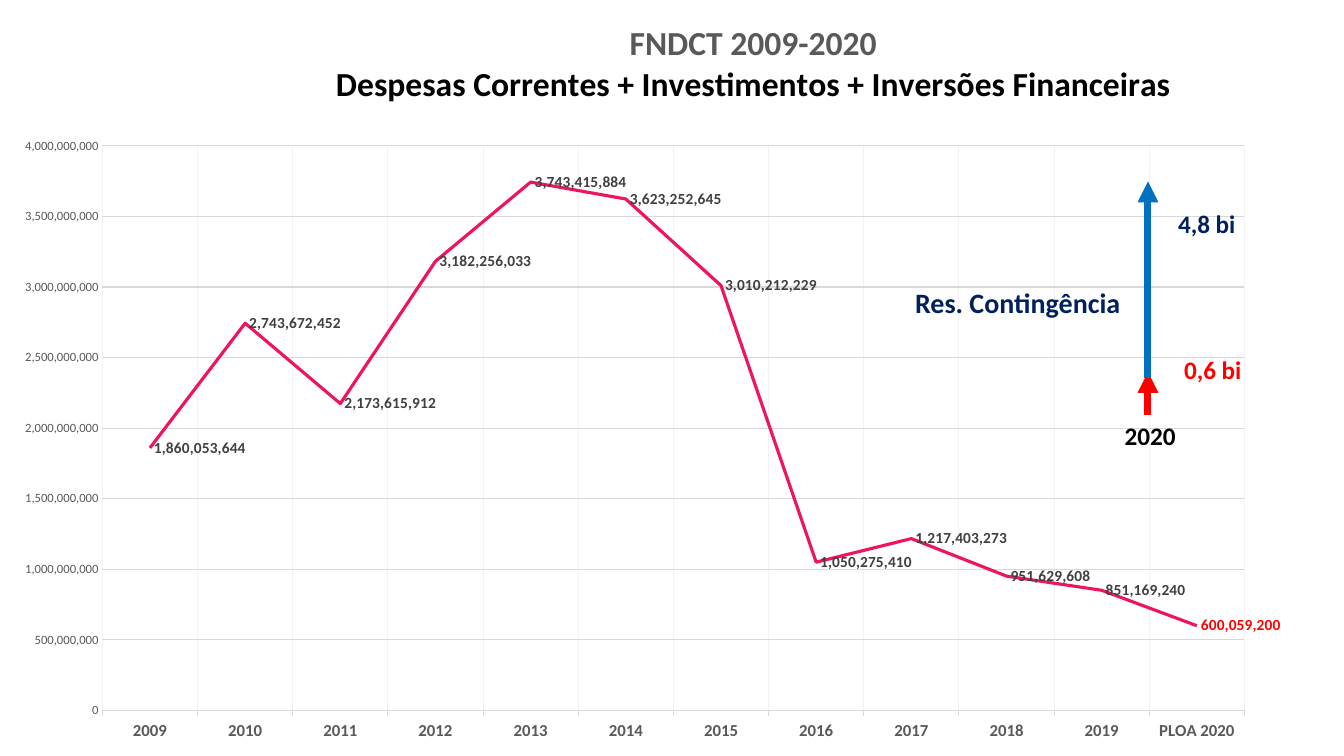
from lxml import etree
from pptx import Presentation
from pptx.chart.data import CategoryChartData
from pptx.dml.color import RGBColor
from pptx.enum.chart import XL_CHART_TYPE, XL_LABEL_POSITION, XL_MARKER_STYLE, XL_TICK_MARK
from pptx.enum.shapes import MSO_CONNECTOR
from pptx.enum.text import MSO_AUTO_SIZE, PP_ALIGN
from pptx.oxml.ns import qn
from pptx.util import Cm, Pt

LINE_CHART = XL_CHART_TYPE.LINE
LABEL_RIGHT = XL_LABEL_POSITION.RIGHT
NO_MARKER = XL_MARKER_STYLE.NONE
TICK_OUTSIDE, TICK_NONE = XL_TICK_MARK.OUTSIDE, XL_TICK_MARK.NONE
STRAIGHT = MSO_CONNECTOR.STRAIGHT
FIT_SHAPE = MSO_AUTO_SIZE.SHAPE_TO_FIT_TEXT
CENTER = PP_ALIGN.CENTER

FONT = "Calibri"
NUMBER_FORMAT = "#,##0"
BLACK, GRAY, DARK_GRAY = "000000", "595959", "404040"
GRID, LIGHT_GRID = "D9D9D9", "F2F2F2"
NAVY, BLUE, RED, PINK = "002060", "0070C0", "FF0000", "EE155A"

EXPENSES = {
    "2009": 1860053644, "2010": 2743672452, "2011": 2173615912,
    "2012": 3182256033, "2013": 3743415884, "2014": 3623252645,
    "2015": 3010212229, "2016": 1050275410, "2017": 1217403273,
    "2018": 951629608, "2019": 851169240, "PLOA 2020": 600059200,
}
TITLE_LINES = [
    ("FNDCT 2009-2020", GRAY),
    ("Despesas Correntes + Investimentos + Inversões Financeiras", BLACK),
]
ARROW_X = 28.93


def color(hex_code):
    return RGBColor.from_string(hex_code)


def format_font(font, size, hex_code, bold=True):
    font.name = FONT
    font.size = Pt(size)
    font.bold = bold
    font.color.rgb = color(hex_code)


def format_line(line, hex_code, width):
    line.color.rgb = color(hex_code)
    line.width = Pt(width)


def place_chart_part(element, index, **fractions):
    """Give a chart part a manual layout in fractions of the chart area."""
    for old_layout in element.findall(qn("c:layout")):
        element.remove(old_layout)
    layout = etree.Element(qn("c:layout"))
    manual = etree.SubElement(layout, qn("c:manualLayout"))
    if "w" in fractions:
        etree.SubElement(manual, qn("c:layoutTarget")).set("val", "inner")
    for name in ("xMode", "yMode"):
        etree.SubElement(manual, qn("c:" + name)).set("val", "edge")
    for name, value in fractions.items():
        etree.SubElement(manual, qn("c:" + name)).set("val", str(value))
    element.insert(index, layout)


def add_chart_title(chart):
    title = chart.chart_title
    text_frame = title.text_frame
    for number, (text, hex_code) in enumerate(TITLE_LINES):
        paragraph = text_frame.add_paragraph() if number else text_frame.paragraphs[0]
        paragraph.alignment = CENTER
        run = paragraph.add_run()
        run.text = text
        format_font(run.font, 24, hex_code)
    place_chart_part(title._element, 1, x=0.26, y=0.01)


def format_axes(chart):
    years = chart.category_axis
    years.major_tick_mark = TICK_OUTSIDE
    years.has_major_gridlines = True
    format_line(years.major_gridlines.format.line, LIGHT_GRID, 0.75)
    format_line(years.format.line, GRID, 0.75)
    format_font(years.tick_labels.font, 12, GRAY)

    amounts = chart.value_axis
    amounts.minimum_scale = 0
    amounts.maximum_scale = 4_000_000_000
    amounts.major_unit = 500_000_000
    amounts.major_tick_mark = TICK_NONE
    amounts.format.line.fill.background()
    format_line(amounts.major_gridlines.format.line, GRID, 0.75)
    format_font(amounts.tick_labels.font, 9, GRAY, bold=False)
    amounts.tick_labels.number_format = NUMBER_FORMAT
    amounts.tick_labels.number_format_is_linked = False


def format_series(series):
    series.smooth = False
    series.marker.style = NO_MARKER
    format_line(series.format.line, PINK, 2.25)
    labels = series.data_labels
    labels.show_value = True
    labels.position = LABEL_RIGHT
    labels.number_format = NUMBER_FORMAT
    labels.number_format_is_linked = False
    format_font(labels.font, 11, DARK_GRAY)
    last_label = series.points[len(EXPENSES) - 1].data_label
    format_font(last_label.font, 11, RED)
    last_label.position = LABEL_RIGHT


def add_expense_chart(slide):
    data = CategoryChartData(number_format=NUMBER_FORMAT)
    data.categories = list(EXPENSES)
    data.add_series("Series 1", list(EXPENSES.values()))
    chart = slide.shapes.add_chart(
        LINE_CHART, Cm(0), Cm(0.28), Cm(32.28), Cm(18.77), data).chart
    chart.has_legend = False
    format_font(chart.font, 10, BLACK, bold=False)
    chart.plots[0].vary_by_categories = False
    add_chart_title(chart)
    format_axes(chart)
    format_series(chart.plots[0].series[0])
    plot_area = chart._chartSpace.find(".//" + qn("c:plotArea"))
    place_chart_part(plot_area, 0, x=0.08, y=0.181, w=0.892, h=0.758)


def add_up_arrow(slide, bottom, top, hex_code):
    arrow = slide.shapes.add_connector(
        STRAIGHT, Cm(ARROW_X), Cm(bottom), Cm(ARROW_X), Cm(top))
    format_line(arrow.line, hex_code, 5)
    line_xml = arrow.line._get_or_add_ln()
    etree.SubElement(line_xml, qn("a:tailEnd")).set("type", "triangle")
    etree.SubElement(arrow._element.spPr, qn("a:effectLst"))


def add_label(slide, text, left, top, width, height, size, hex_code):
    box = slide.shapes.add_textbox(Cm(left), Cm(top), Cm(width), Cm(height))
    text_frame = box.text_frame
    text_frame.word_wrap = False
    text_frame.auto_size = FIT_SHAPE
    run = text_frame.paragraphs[0].add_run()
    run.text = text
    format_font(run.font, size, hex_code)


def main():
    presentation = Presentation()
    presentation.slide_width = Cm(33.87)
    presentation.slide_height = Cm(19.05)
    blank_layout = presentation.slide_layouts[6]
    slide = presentation.slides.add_slide(blank_layout)

    add_expense_chart(slide)
    add_up_arrow(slide, 10.46, 9.37, RED)
    add_up_arrow(slide, 9.53, 4.57, BLUE)
    add_label(slide, "Res. Contingência", 22.81, 7.06, 5.74, 1.12, 20, NAVY)
    add_label(slide, "4,8 bi", 29.44, 5.13, 1.98, 1.02, 18, NAVY)
    add_label(slide, "0,6 bi", 29.59, 8.81, 1.98, 1.02, 18, RED)
    add_label(slide, "2020", 28.09, 10.46, 1.8, 1.02, 18, BLACK)
    presentation.save("out.pptx")


if __name__ == "__main__":
    main()
